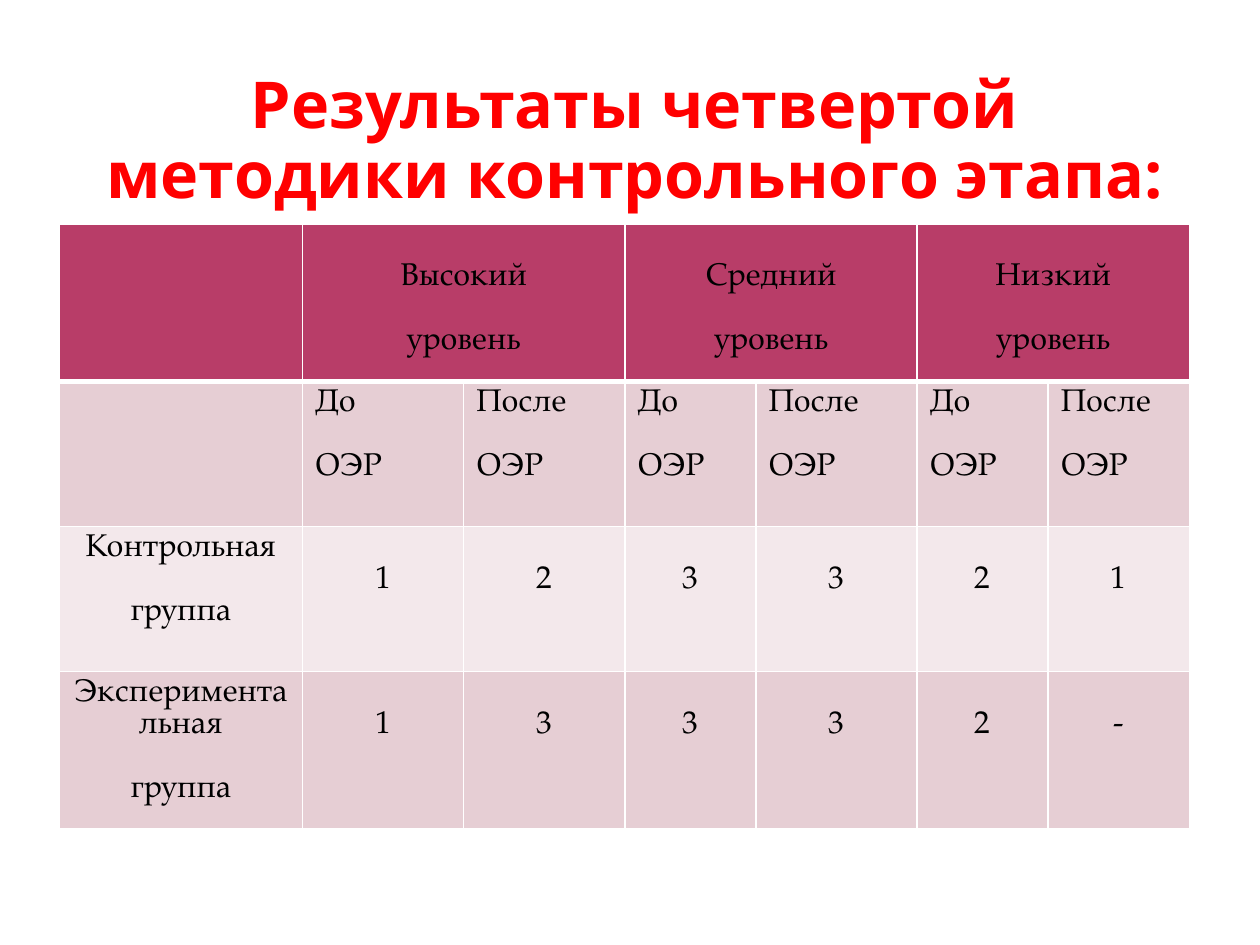
from pptx import Presentation
from pptx.dml.color import RGBColor
from pptx.enum.text import MSO_ANCHOR, PP_ALIGN
from pptx.oxml import parse_xml
from pptx.oxml.ns import nsdecls
from pptx.util import Inches, Pt

RED = RGBColor(0xFF, 0x00, 0x00)
BLACK = RGBColor(0x00, 0x00, 0x00)
WHITE = RGBColor(0xFF, 0xFF, 0xFF)
CRIMSON = RGBColor(0xB8, 0x3D, 0x68)
PINK = RGBColor(0xE6, 0xCE, 0xD4)
PALE = RGBColor(0xF3, 0xE8, 0xEB)

LEFT, WIDTH = 0.47, 8.98
COLS = [1.93, 1.28, 1.28, 1.04, 1.28, 1.04, 1.12]
ROWS = [1.25, 1.15, 1.15, 1.25]
FILLS = [CRIMSON, PINK, PALE, PINK]
LINE = Pt(18.3)
MARGIN = Inches(0.05)

LEVELS = ["Высокий", "Средний", "Низкий"]
STAGES = ["До", "После"]
GROUPS = [("Контрольная", "123321"), ("Экспериментальная", "13332-")]


def add_run(p, text, font, size, color, bold=False):
    r = p.add_run()
    r.text = text
    r.font.name = font
    r.font.size = Pt(size)
    r.font.color.rgb = color
    r.font.bold = bold


def add_title(s, text):
    tf = s.shapes.add_textbox(Inches(0.55), Inches(0.62), Inches(WIDTH), Inches(1.02)).text_frame
    tf.word_wrap = True
    tf.vertical_anchor = MSO_ANCHOR.MIDDLE
    p = tf.paragraphs[0]
    p.alignment = PP_ALIGN.CENTER
    p.line_spacing = 0.9
    add_run(p, text, "Noto Sans", 36.9, RED, True)


def set_border(cell, side, width):
    cell._tc.get_or_add_tcPr().append(parse_xml(
        f'<a:{side} {nsdecls("a")} w="{Pt(width)}"><a:solidFill>'
        f'<a:srgbClr val="{WHITE}"/></a:solidFill></a:{side}>'))


def style_cell(cell, row):
    for side in ("lnL", "lnR", "lnT", "lnB"):
        heavy = (row, side) in ((0, "lnB"), (1, "lnT"))
        set_border(cell, side, 3 if heavy else 1)
    cell.fill.solid()
    cell.fill.fore_color.rgb = FILLS[row]


def fill_cell(cell, lines, align=PP_ALIGN.CENTER, lowered=False):
    cell.margin_top = MARGIN + (LINE if lowered else 0)
    tf = cell.text_frame
    for i, line in enumerate(lines):
        p = tf.add_paragraph() if i else tf.paragraphs[0]
        p.alignment = align
        p.line_spacing = LINE
        if i:
            p.space_before = LINE
        add_run(p, line, "TeX Gyre Pagella", 18, BLACK)


def add_results(s):
    table = s.shapes.add_table(len(ROWS), len(COLS), Inches(LEFT), Inches(1.78),
                               Inches(sum(COLS)), Inches(sum(ROWS))).table
    for col, width in zip(table.columns, COLS):
        col.width = Inches(width)
    for i, height in enumerate(ROWS):
        table.rows[i].height = Inches(height)
        for j in range(len(COLS)):
            style_cell(table.cell(i, j), i)
    for i, level in enumerate(LEVELS):
        first = 1 + 2 * i
        head = table.cell(0, first)
        head.merge(table.cell(0, first + 1))
        fill_cell(head, [level, "уровень"], lowered=True)
        for j, stage in enumerate(STAGES):
            fill_cell(table.cell(1, first + j), [stage, "ОЭР"], PP_ALIGN.LEFT)
    for i, (group, values) in enumerate(GROUPS, 2):
        fill_cell(table.cell(i, 0), [group, "группа"])
        for j, value in enumerate(values, 1):
            fill_cell(table.cell(i, j), [value], lowered=True)


def main():
    prs = Presentation()
    prs.slide_width, prs.slide_height = Inches(10), Inches(7.5)
    s = prs.slides.add_slide(prs.slide_layouts[6])
    add_title(s, "Результаты четвертой методики контрольного этапа:")
    add_results(s)
    prs.save("out.pptx")


if __name__ == "__main__":
    main()
